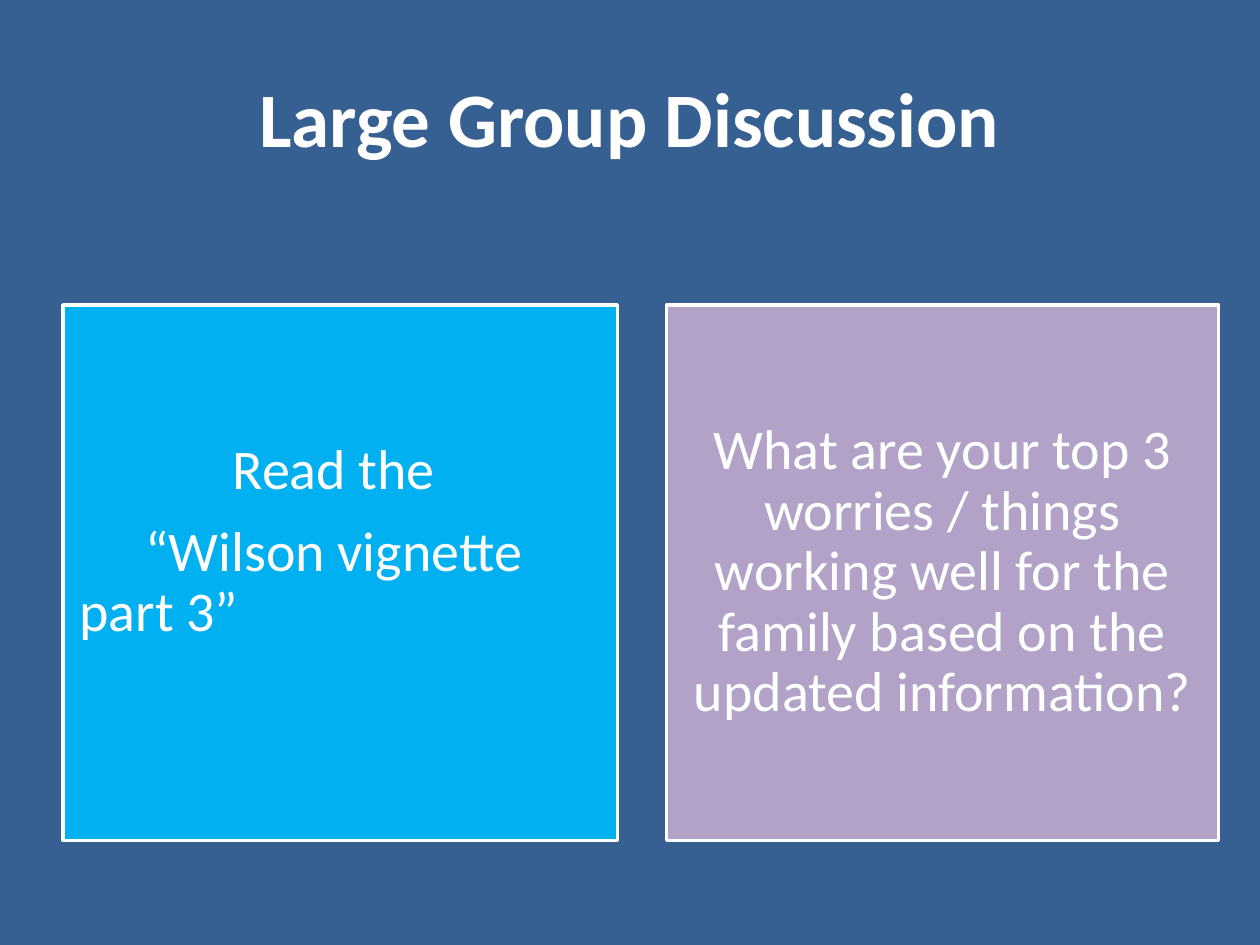
import pptx
import pptx.util
import pptx.dml.color
import pptx.enum.shapes
import pptx.enum.text

Inches = pptx.util.Inches
Pt = pptx.util.Pt
ALIGN = pptx.enum.text.PP_ALIGN
MIDDLE = pptx.enum.text.MSO_ANCHOR.MIDDLE
FONT = "Calibri"
COLOURS = {
    "background": "376092",
    "text": "FFFFFF",
    "reading": "00B0F0",
    "question": "B3A2C7",
}


def colour(name):
    """Return the named colour."""
    return pptx.dml.color.RGBColor.from_string(COLOURS[name])


def format_paragraph(paragraph, size, alignment, bold=False):
    """Align a paragraph and style its runs."""
    paragraph.alignment = alignment
    for run in paragraph.runs:
        run.font.name = FONT
        run.font.size = Pt(size)
        run.font.bold = bold
        run.font.color.rgb = colour("text")


def place_title(slide, left, top, width, height):
    """Fill and place the title placeholder."""
    title = slide.shapes.title
    title.left, title.top = Inches(left), Inches(top)
    title.width, title.height = Inches(width), Inches(height)
    title.text_frame.text = "Large Group Discussion"
    title.text_frame.vertical_anchor = MIDDLE
    format_paragraph(title.text_frame.paragraphs[0], 44, ALIGN.CENTER, bold=True)


def add_card(slide, left, top, width, height, fill, lines, bottom_inset=0.13):
    """Add an outlined card; each line is text, alignment and space after."""
    card = slide.shapes.add_shape(
        pptx.enum.shapes.MSO_SHAPE.RECTANGLE,
        Inches(left), Inches(top), Inches(width), Inches(height))
    card.shadow.inherit = False
    card.fill.solid()
    card.fill.fore_color.rgb = colour(fill)
    card.line.color.rgb = colour("text")
    card.line.width = Pt(2)
    frame = card.text_frame
    frame.word_wrap = True
    frame.vertical_anchor = MIDDLE
    frame.margin_left = frame.margin_right = frame.margin_top = Inches(0.13)
    frame.margin_bottom = Inches(bottom_inset)
    frame.text = "\n".join(text for text, _, _ in lines)
    for paragraph, (_, alignment, space_after) in zip(frame.paragraphs, lines):
        format_paragraph(paragraph, 32, alignment)
        paragraph.line_spacing = 0.9
        paragraph.space_before = Pt(0)
        paragraph.space_after = Pt(space_after)


def main():
    """Build and save the discussion slide."""
    presentation = pptx.Presentation()
    presentation.slide_width = Inches(10)
    presentation.slide_height = Inches(7.5)
    slide = presentation.slides.add_slide(presentation.slide_layouts[5])
    slide.background.fill.solid()
    slide.background.fill.fore_color.rgb = colour("background")
    place_title(slide, 0.5, 0.3, 9, 1.25)
    add_card(slide, 0.5, 2.42, 4.4, 4.25, "reading", [
        ("Read the ", ALIGN.CENTER, 12),
        ("“Wilson vignette ", ALIGN.CENTER, 0),
        ("part 3”", ALIGN.LEFT, 0),
    ], bottom_inset=0.61)
    add_card(slide, 5.29, 2.42, 4.38, 4.25, "question", [
        ("What are your top 3 worries / things working well for the family "
         "based on the updated information?", ALIGN.CENTER, 0),
    ])
    presentation.save("out.pptx")


if __name__ == "__main__":
    main()
